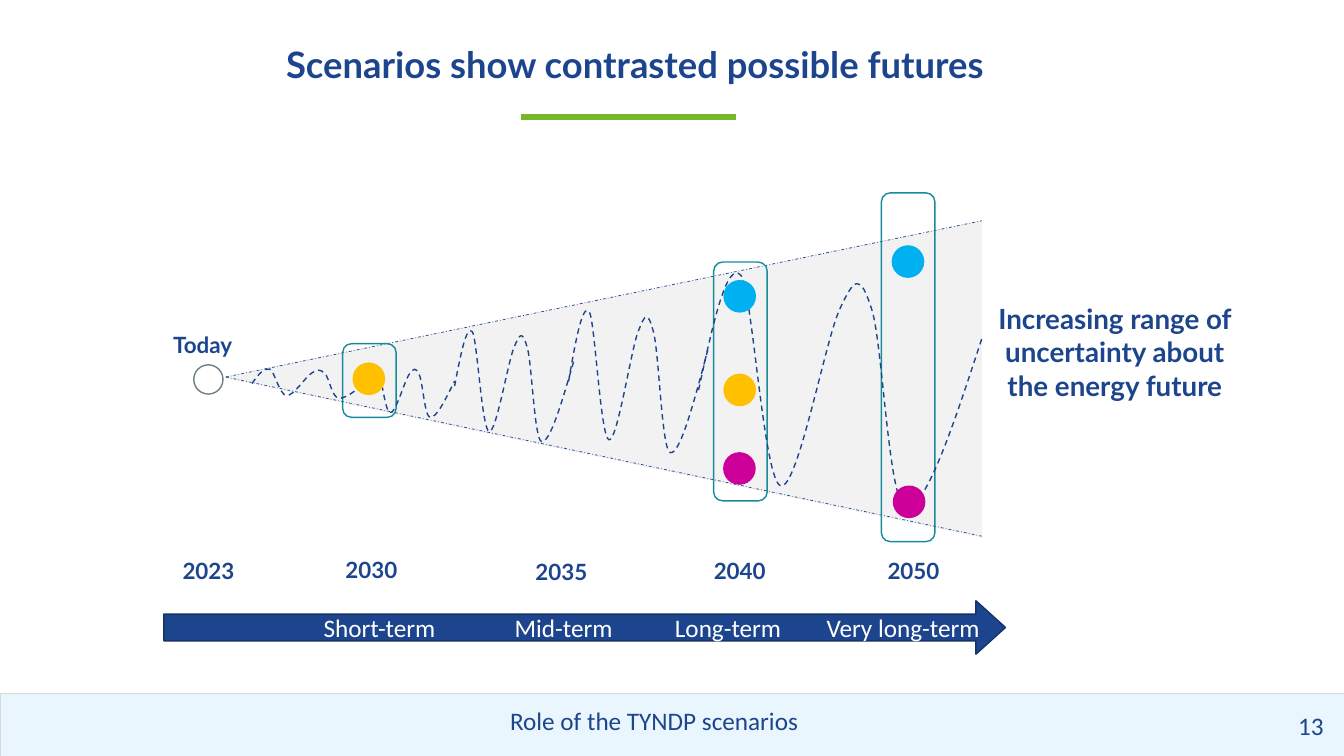
from lxml.etree import SubElement
from pptx import Presentation
from pptx.dml.color import RGBColor
from pptx.enum.dml import MSO_LINE as DASH
from pptx.enum.shapes import MSO_CONNECTOR, MSO_SHAPE as SHAPE
from pptx.enum.text import MSO_ANCHOR as ANCHOR, MSO_AUTO_SIZE, PP_ALIGN as ALIGN
from pptx.oxml.ns import qn
from pptx.util import Pt

NAVY = RGBColor(0x1D, 0x45, 0x8D)
DARK_NAVY = RGBColor(0x15, 0x33, 0x68)
GREEN = RGBColor(0x76, 0xB8, 0x28)
TEAL = RGBColor(0x18, 0x8B, 0x9A)
SKY = RGBColor(0x00, 0xB0, 0xF0)
AMBER = RGBColor(0xFF, 0xC0, 0x00)
MAGENTA = RGBColor(0xCC, 0x00, 0x99)
PALE_BLUE = RGBColor(0xEA, 0xF6, 0xFE)
PALE_GREY = RGBColor(0xF2, 0xF2, 0xF2)
GREY = RGBColor(0xD9, 0xD9, 0xD9)
SLATE = RGBColor(0x70, 0x7D, 0x84)
WHITE = RGBColor(0xFF, 0xFF, 0xFF)

LABEL = {"name": "Lato", "size": Pt(16), "bold": True}
CALLOUT = {"name": "Lato", "size": Pt(19.8), "bold": True}
HEADING = {"name": "Lato", "size": Pt(26), "bold": True}
PLAIN = {"name": "Calibri", "size": Pt(18), "bold": False}

presentation = Presentation()
presentation.slide_width = Pt(960)
presentation.slide_height = Pt(540)
slide = presentation.slides.add_slide(presentation.slide_layouts[5])
shapes = slide.shapes


def add_box(kind, box, fill, line, width=1):
    shape = shapes.add_shape(kind, *map(Pt, box))
    shape.shadow.inherit = False
    if fill is None:
        shape.fill.background()
    else:
        shape.fill.solid()
        shape.fill.fore_color.rgb = fill
    shape.line.color.rgb = line
    shape.line.width = Pt(width)
    return shape


def write_text(shape, text, font_format, color=NAVY, align=ALIGN.CENTER, spacing=1.0, anchor=ANCHOR.TOP):
    frame = shape.text_frame
    frame.word_wrap = True
    frame.auto_size = MSO_AUTO_SIZE.NONE
    frame.vertical_anchor = anchor
    paragraph = frame.paragraphs[0]
    paragraph.alignment = align
    paragraph.line_spacing = spacing
    run = paragraph.add_run()
    run.text = text
    for name, value in font_format.items():
        setattr(run.font, name, value)
    run.font.color.rgb = color
    return paragraph


title = shapes.title
title.left, title.top, title.width, title.height = map(Pt, (66.2, 30.2, 775.4, 44.6))
write_text(title, "Scenarios show contrasted possible futures", HEADING, spacing=0.9)

add_box(SHAPE.RECTANGLE, (0, 494.9, 960, 45.1), PALE_BLUE, GREY, 0.25)
cone = add_box(SHAPE.ISOSCELES_TRIANGLE, (318.2, 0.7, 225.4, 540), PALE_GREY, PALE_GREY)
cone.adjustments[0] = 0.505
cone.rotation = 270

lines = [
    ((372.2, 83.5, 525.6, 83.5), GREEN, 4.5, DASH.SOLID),
    ((161.3, 269.3, 701.3, 383), NAVY, 0.5, DASH.DASH_DOT),
    ((161.3, 269.3, 701.3, 157.7), NAVY, 0.5, DASH.DASH_DOT),
]
for ends, color, width, dash in lines:
    connector = shapes.add_connector(MSO_CONNECTOR.STRAIGHT, *map(Pt, ends))
    connector.line.color.rgb = color
    connector.line.width = Pt(width)
    connector.line.dash_style = dash
    SubElement(connector._element.spPr, qn("a:effectLst"))

for left, top, height in [(244.8, 245.5, 52.6), (509.8, 187.2, 170.6), (629.6, 137.8, 249.1)]:
    add_box(SHAPE.ROUNDED_RECTANGLE, (left, top, 38.2, height), None, TEAL)

WAVE_START = (0, 0.5)
WAVE_CURVES = [
    ((0.05, 0.22), (0.1, -0.06), (0.15, 0.01)),
    ((0.19, 0.08), (0.23, 0.89), (0.29, 0.91)),
    ((0.35, 0.93), (0.45, 0.27), (0.5, 0.15)),
    ((0.55, 0.02), (0.57, 0), (0.61, 0.15)),
    ((0.65, 0.29), (0.67, 0.98), (0.73, 1)),
    ((0.8, 1.02), (0.9, 0.65), (1, 0.28)),
]
wave_boxes = [
    (180, 263.5, 85, 20.9),
    (259.9, 262.1, 64.8, 36),
    (324.7, 236.2, 85, 79.2),
    (406.1, 221.8, 99.4, 101.5),
    (499, 195.1, 202.3, 167),
]
for left, top, width, height in wave_boxes:
    start, *curves = [
        [(Pt(left + x * width), Pt(top + y * height)) for x, y in curve]
        for curve in ((WAVE_START,), *WAVE_CURVES)
    ]
    builder = shapes.build_freeform(*start[0])
    builder.add_line_segments([curve[-1] for curve in curves], close=False)
    wave = builder.convert_to_shape()
    for segment, curve in zip(list(wave._element.iter(qn("a:lnTo"))), curves):
        segment.tag = qn("a:cubicBezTo")
        segment.remove(segment[0])
        for x, y in curve:
            SubElement(segment, qn("a:pt"), x=str(x - wave.left), y=str(y - wave.top))
    wave.shadow.inherit = False
    wave.fill.background()
    wave.line.color.rgb = NAVY
    wave.line.width = Pt(1)
    wave.line.dash_style = DASH.DASH

add_box(SHAPE.OVAL, (138.4, 260.6, 20.9, 20.9), WHITE, SLATE)
dots = [
    (517.2, 200.5, SKY), (637.4, 175.7, SKY),
    (252.3, 259.4, AMBER), (517.2, 267.4, AMBER),
    (517, 323.5, MAGENTA), (638.2, 347.3, MAGENTA),
]
for left, top, color in dots:
    add_box(SHAPE.OVAL, (left, top, 22.3, 22.3), color, color)

arrow = add_box(SHAPE.RIGHT_ARROW, (117, 429.1, 601.2, 38.2), NAVY, DARK_NAVY)
arrow.adjustments[1] = 0.552
arrow.text_frame.margin_right = 0
terms = ["Short-term", "Mid-term", "Long-term", "Very long-term"]
paragraph = write_text(arrow, "".join("\t" + term for term in terms), PLAIN, WHITE, ALIGN.LEFT, anchor=ANCHOR.MIDDLE)
tab_list = SubElement(paragraph._p.get_or_add_pPr(), qn("a:tabLst"))
for position in (107, 243.5, 358, 466.3):
    SubElement(tab_list, qn("a:tab"), pos=str(Pt(position)), algn="l")

years = [
    ("2023", 148.9, 390.6), ("2030", 265.3, 390.2), ("2035", 401, 391.2),
    ("2040", 528.4, 390.6), ("2050", 652.5, 390.6),
]
for year, center, top in years:
    label = shapes.add_textbox(Pt(center - 39.2), Pt(top), Pt(78.4), Pt(23.8))
    write_text(label, year, LABEL, spacing=1.2)

today = shapes.add_textbox(Pt(70.6), Pt(221), Pt(148.3), Pt(46.1))
write_text(today, "Today", LABEL, spacing=1.2, anchor=ANCHOR.MIDDLE)
callout = shapes.add_textbox(Pt(704.4), Pt(212), Pt(183.6), Pt(110.2))
write_text(callout, "Increasing range of uncertainty about the energy future", CALLOUT)
footer = shapes.add_textbox(Pt(17.6), Pt(500.4), Pt(899.3), Pt(28.8))
write_text(footer, "Role of the TYNDP scenarios", PLAIN)
page_number = shapes.add_textbox(Pt(920.2), Pt(504), Pt(36.7), Pt(20.9))
write_text(page_number, "13", PLAIN, align=ALIGN.LEFT)

presentation.save("out.pptx")
